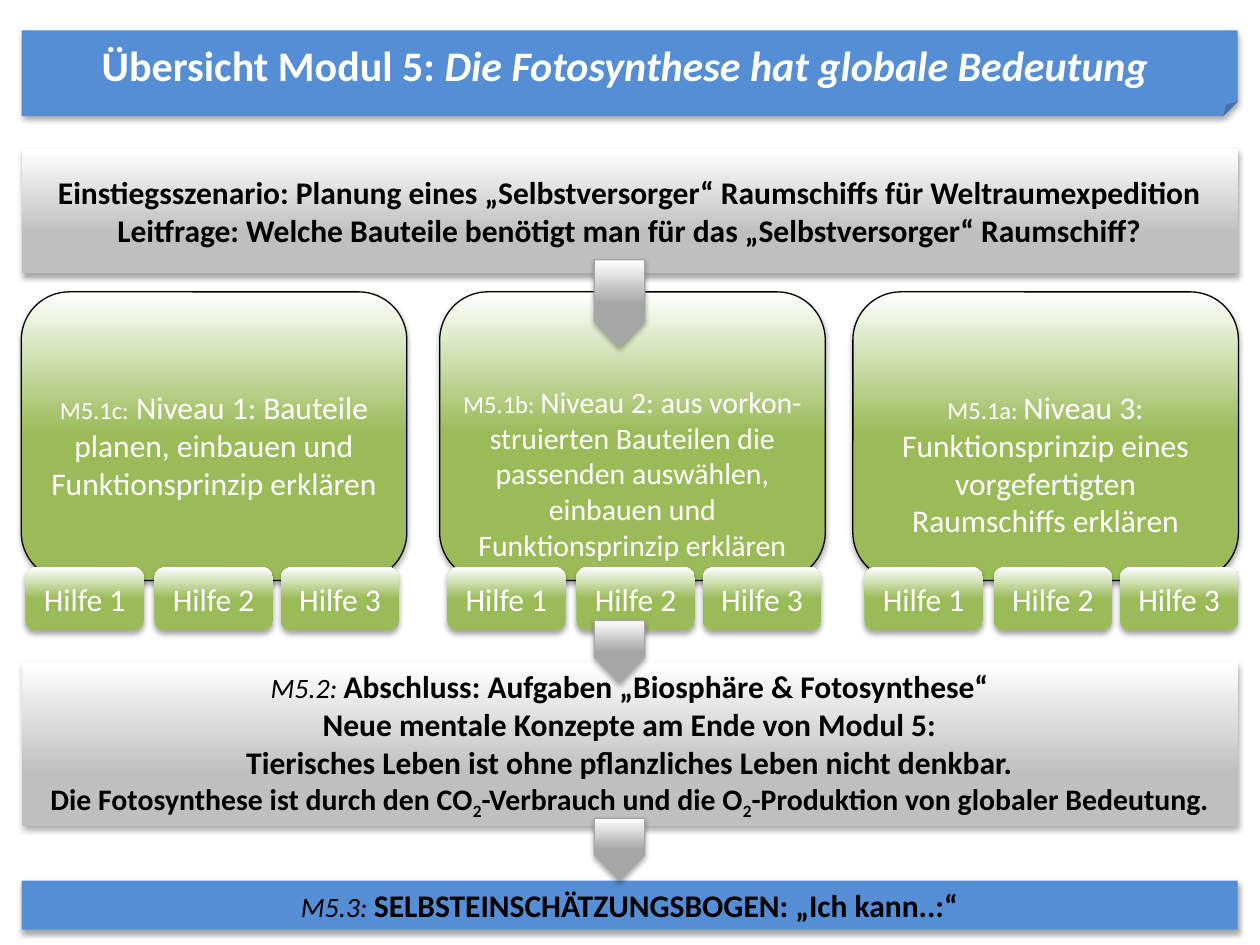
from lxml import etree
from pptx import Presentation
from pptx.dml.color import RGBColor
from pptx.enum import shapes, text
from pptx.oxml import ns
from pptx.util import Pt

# A run is (text, size, style): b = bold, i = italic, s = subscript.
TITLE = [[("Übersicht Modul 5: ", 24, "b"),
          ("Die Fotosynthese hat globale Bedeutung ", 24, "bi")]]
INTRO = [
    [("Einstiegsszenario: Planung eines „Selbstversorger“ Raumschiffs für Weltraumexpedition", 18, "b")],
    [("Leitfrage: Welche Bauteile benötigt man für das „Selbstversorger“ Raumschiff?", 18, "b")],
]
# left, left of the help row, text size, side inset, label, task
LEVELS = [
    (12.2, 14.5, 18, 7.2, "M5.1c:",
     " Niveau 1: Bauteile planen, einbauen und Funktionsprinzip erklären"),
    (251.3, 255.6, 17, 0, "M5.1b: ",
     "Niveau 2: aus vorkon-struierten Bauteilen die passenden auswählen, "
     "einbauen und Funktionsprinzip erklären"),
    (487.4, 494, 18, 7.2, "M5.1a: ",
     "Niveau 3: Funktionsprinzip eines vorgefertigten Raumschiffs erklären"),
]
HELPS = [("Hilfe 1", 0), ("Hilfe 2", 73.8), ("Hilfe 3", 146)]
FINAL = [
    [("M5.2: ", 16, "i"), ("Abschluss: Aufgaben „Biosphäre & Fotosynthese“", 18, "b")],
    [("Neue mentale Konzepte am Ende von Modul 5:", 18, "b")],
    [("Tierisches Leben ist ohne pflanzliches Leben nicht denkbar.", 18, "b")],
    [("Die Fotosynthese ist durch den CO", 17, "b"), ("2", 17, "bs"),
     ("-Verbrauch und die O", 17, "b"), ("2", 17, "bs"),
     ("-Produktion von globaler Bedeutung.", 17, "b")],
]
CHECK = [[("M5.3: ", 16, "i"), ("SELBSTEINSCHÄTZUNGSBOGEN: „Ich kann..:“", 18, "b")]]
ARROWS = [(148.5, 49.5), (354.5, 35.3), (467.6, 35.3)]  # top, length

LEFT, WIDE = 12.4, 694.8
BLACK, WHITE, BLUE = "000000", "FFFFFF", "558ED5"
GREEN = ("9BBB59", 0.51, 90)  # colour, its stop, angle towards white
GREY = ("BFBFBF", 0.32, 90)
STEEL = ("A6A6A6", 0.49, 180)
KIND = shapes.MSO_SHAPE
MID, TOP = text.MSO_ANCHOR.MIDDLE, text.MSO_ANCHOR.TOP

deck = Presentation()
deck.slide_width, deck.slide_height = Pt(720), Pt(540)
page = deck.slides.add_slide(deck.slide_layouts[6])


def color(code):
    return RGBColor.from_string(code)


def shade(shape):
    """Give the shape a soft shadow below it."""
    shape.shadow.inherit = False
    effects = shape._element.spPr.find(ns.qn("a:effectLst"))
    outer = etree.SubElement(effects, ns.qn("a:outerShdw"), blurRad="40000",
                             dist="23000", dir="5400000", rotWithShape="0")
    tone = etree.SubElement(outer, ns.qn("a:srgbClr"), val=BLACK)
    etree.SubElement(tone, ns.qn("a:alpha"), val="35000")


def box(kind, left, top, width, height, paint, edge=None):
    """Add a shape; paint is a hex colour or a fade to white."""
    shape = page.shapes.add_shape(kind, Pt(left), Pt(top), Pt(width), Pt(height))
    if isinstance(paint, str):
        shape.fill.solid()
        shape.fill.fore_color.rgb = color(paint)
    else:
        tint, stop, angle = paint
        shape.fill.gradient()
        shape.fill.gradient_angle = angle
        first, last = shape.fill.gradient_stops
        first.color.rgb, first.position = color(tint), stop
        last.color.rgb, last.position = color(WHITE), 1
    if edge:
        shape.line.color.rgb = color(edge)
        shape.line.width = Pt(0.75)
    else:
        shape.line.fill.background()
    shade(shape)
    return shape


def write(shape, paras, ink, anchor=MID, side=7.2, top=3.6, base=3.6):
    frame = shape.text_frame
    frame.word_wrap = True
    frame.vertical_anchor = anchor
    frame.margin_left = frame.margin_right = Pt(side)
    frame.margin_top, frame.margin_bottom = Pt(top), Pt(base)
    for i, runs in enumerate(paras):
        para = frame.add_paragraph() if i else frame.paragraphs[0]
        para.alignment = text.PP_ALIGN.CENTER
        for words, size, style in runs:
            run = para.add_run()
            run.text = words
            font = run.font
            font.name, font.size = "Calibri", Pt(size)
            font.bold, font.italic = "b" in style, "i" in style
            font.color.rgb = color(ink)
            if "s" in style:
                font._element.set("baseline", "-25000")


def arrow(top, length, mid=354, width=28.8):
    """Add a pentagon turned to point down; top is where it starts on the page."""
    shape = box(KIND.PENTAGON, mid - length / 2, top + (length - width) / 2,
                length, width, STEEL, STEEL[0])
    shape.rotation = 90


box(KIND.FOLDED_CORNER, LEFT, 17.3, WIDE, 49, BLUE)
head = page.shapes.add_textbox(Pt(LEFT), Pt(18.9), Pt(WIDE), Pt(36))
write(head, TITLE, WHITE, TOP)

for left, row, size, side, label, task in LEVELS:
    level = box(KIND.ROUNDED_RECTANGLE, left, 166.8, 220.3, 164.9, GREEN, BLACK)
    write(level, [[(label, 14, ""), (task, size, "")]], WHITE, TOP, side,
          top=3 + 2.44 * size, base=0)
    for name, step in HELPS:
        tab = box(KIND.ROUNDED_RECTANGLE, row + step, 324.3, 67.7, 36, GREEN)
        write(tab, [[(name, 18, "")]], WHITE)

for top, height, paint, paras in [(85, 71.3, GREY, INTRO),
                                  (378.4, 93.6, GREY, FINAL),
                                  (503.3, 28, BLUE, CHECK)]:
    write(box(KIND.RECTANGLE, LEFT, top, WIDE, height, paint), paras, BLACK)

for top, length in ARROWS:
    arrow(top, length)

deck.save("out.pptx")
